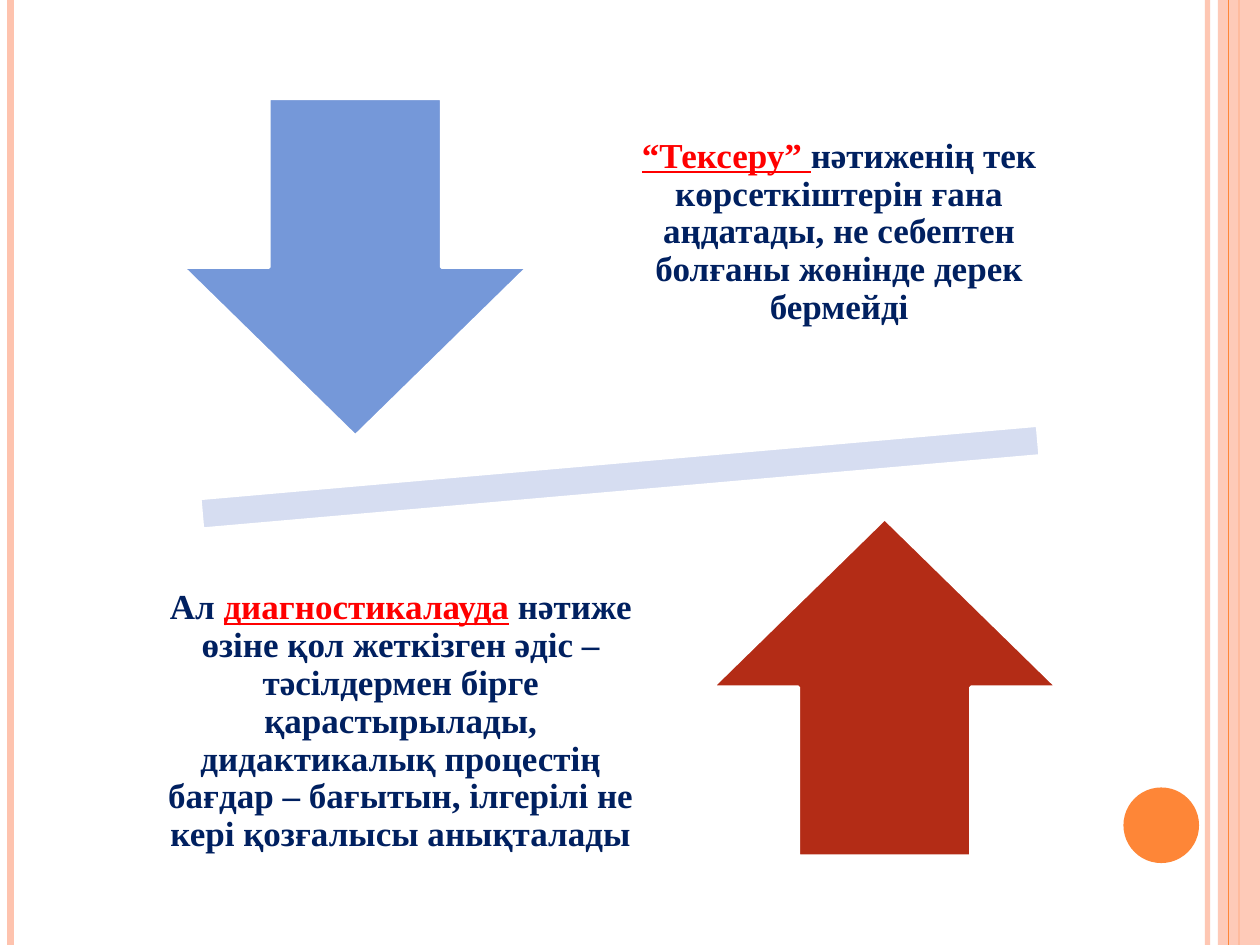
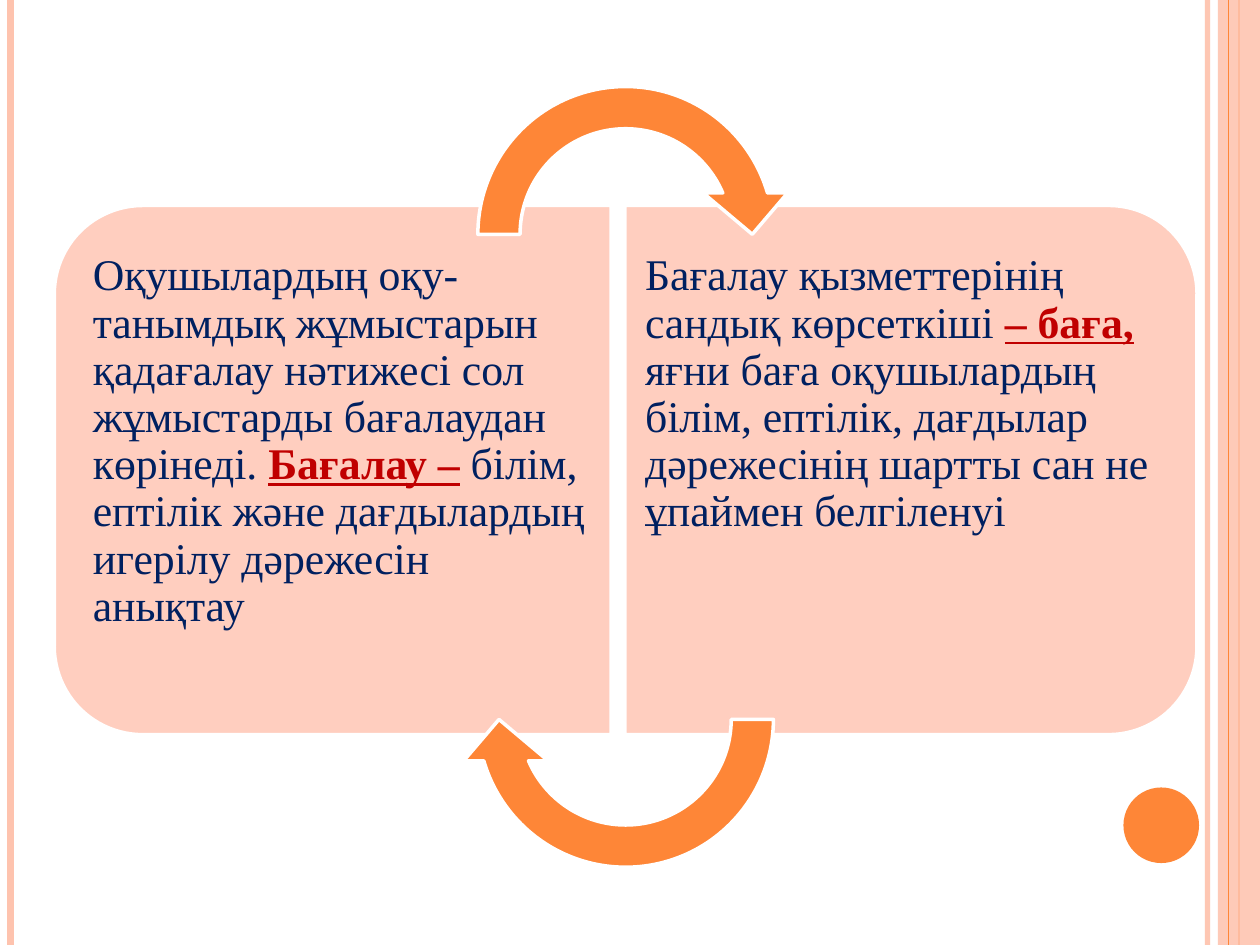
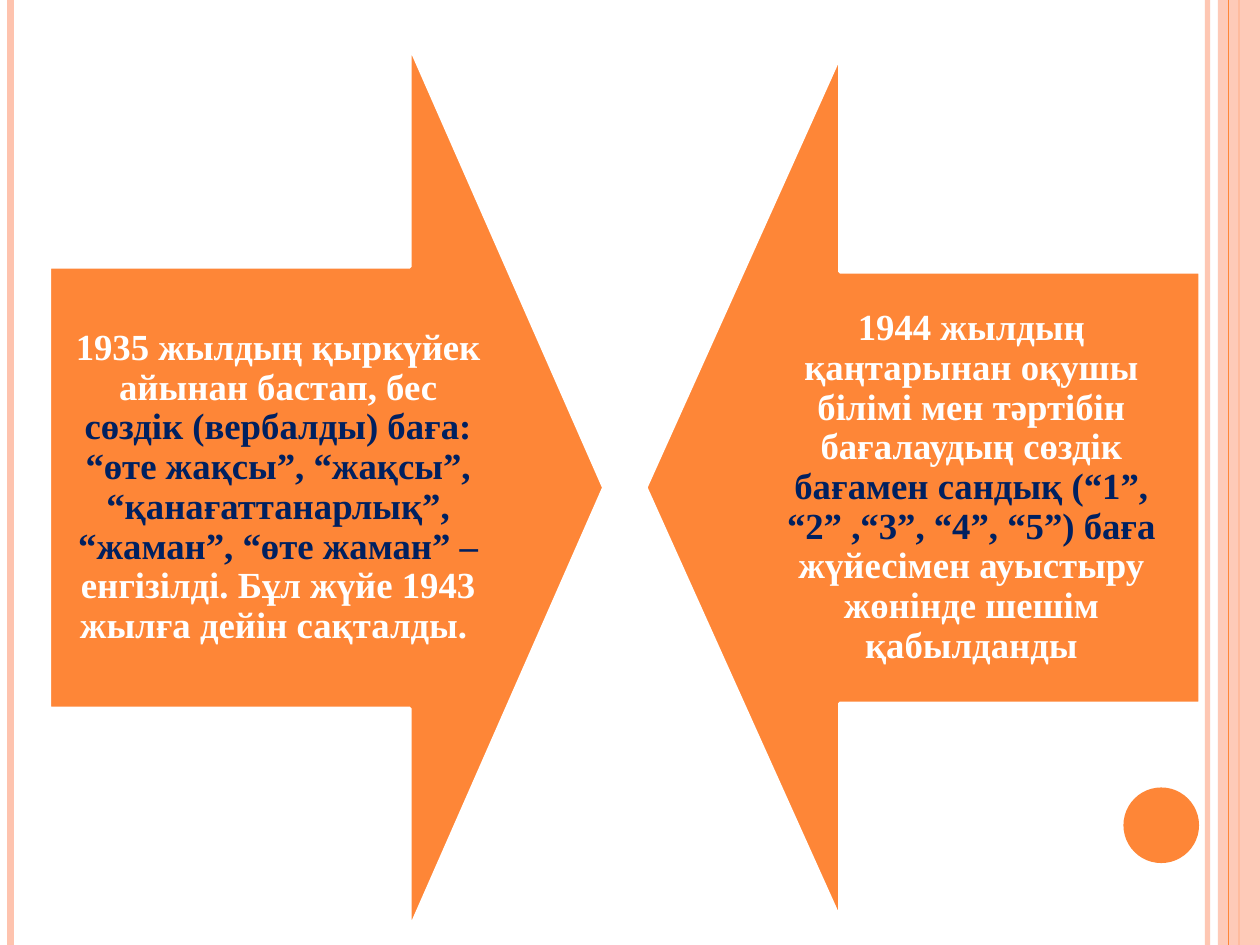
from lxml import etree
from pptx import Presentation
from pptx.dml.color import RGBColor
from pptx.enum import shapes, text
from pptx.oxml.ns import qn
from pptx.util import Pt

W, H = 720, 540
FONT = "Times New Roman"
PEACH, ORANGE, PANEL = "FEC3AE", "FE8637", "FFCEBF"
BLUE, BRICK, BAR = "7598D9", "B32C16", "D6DDF1"
WHITE, NAVY, RED, CRIMSON = "FFFFFF", "002060", "FF0000", "C00000"
SHAPE = shapes.MSO_SHAPE
CENTER = text.PP_ALIGN.CENTER
MIDDLE = text.MSO_ANCHOR.MIDDLE


def rgb(color):
    return RGBColor.from_string(color)


def set_alpha(fill_parent, percent):
    clr = next(fill_parent.iter(qn("a:srgbClr")))
    etree.SubElement(clr, qn("a:alpha")).set("val", str(percent * 1000))


def add_preset(s, kind, box, fill, line=None, rotation=0, adj=()):
    x, y, w, h = box
    if rotation in (90, 270):
        x, y, w, h = x + (w - h) / 2, y + (h - w) / 2, h, w
    sp = s.shapes.add_shape(kind, Pt(x), Pt(y), Pt(w), Pt(h))
    sp.shadow.inherit = False
    sp.rotation = rotation
    sp.fill.solid()
    sp.fill.fore_color.rgb = rgb(fill)
    if line:
        sp.line.color.rgb = rgb(line)
        sp.line.width = Pt(2)
    else:
        sp.line.fill.background()
    for i, value in enumerate(adj):
        sp.adjustments[i] = value
    return sp


def add_stripe(s, x, color, width, alpha=None):
    c = s.shapes.add_connector(shapes.MSO_CONNECTOR.STRAIGHT, Pt(x), 0, Pt(x), Pt(H))
    c.line.color.rgb = rgb(color)
    c.line.width = Pt(width)
    spPr = c._element.spPr
    if alpha:
        set_alpha(spPr, alpha)
    etree.SubElement(spPr, qn("a:effectLst"))


def add_text(s, box, runs, size, insets=(11.5, 11.5, 11.5, 11.5), align=CENTER, anchor=MIDDLE):
    tf = s.shapes.add_textbox(*map(Pt, box)).text_frame
    tf.word_wrap = True
    tf.vertical_anchor = anchor
    tf.margin_left, tf.margin_top, tf.margin_right, tf.margin_bottom = map(Pt, insets)
    p = tf.paragraphs[0]
    p.alignment = align
    p.line_spacing = 0.9
    for words, color, bold, underline in runs:
        r = p.add_run()
        r.text = words
        r.font.name = FONT
        r.font.size = Pt(size)
        r.font.bold = bold
        r.font.underline = underline
        r.font.color.rgb = rgb(color)


def add_frame(s):
    add_stripe(s, 690, PEACH, 3, 93)
    add_stripe(s, 6, PEACH, 4.5)
    add_stripe(s, 708, ORANGE, 1.5)
    band = add_preset(s, SHAPE.RECTANGLE, (696, 0, 24, H), PEACH)
    set_alpha(band._element.spPr, 87)
    add_stripe(s, 702, ORANGE, 0.75)
    add_preset(s, SHAPE.OVAL, (642, 450, 43.2, 43.2), ORANGE)


def add_balance(s, box, upper_runs, lower_runs):
    x, y, w, h = box
    arrow_w, arrow_h, text_h = 197.3, 193, 202.3
    dx, dy = 33.8, 24.5
    bar_w, bar_h = 653.8, 75
    bar = (x + (w - bar_w) / 2, y + (h - bar_h) / 2, bar_w, bar_h)
    add_preset(s, SHAPE.MATH_MINUS, bar, BAR, WHITE, 355)
    add_preset(s, SHAPE.DOWN_ARROW, (x + dx, y + dy, arrow_w, arrow_h), BLUE, WHITE)
    add_text(s, (x + 267.1, y, 283.7, text_h), upper_runs, 20)
    up = (x + w - dx - arrow_w, y + h - dy - arrow_h, arrow_w, arrow_h)
    add_preset(s, SHAPE.UP_ARROW, up, BRICK, WHITE)
    add_text(s, (x, y + h - text_h, 316.8, text_h), lower_runs, 20)


def add_cycle(s, box, left_runs, right_runs):
    x, y, w, h = box
    panel_y, panel_h = y + 80, 302.4
    left_w, right_w = 318.2, 326.9
    pad, ring = 15, 193
    right_x = x + w - right_w
    text_y, text_h = panel_y + pad, panel_h - 2 * pad
    halves = (
        (x, left_w, 270, x + pad, (7.2, 12.2, 11.5, 12.2), left_runs),
        (right_x, right_w, 90, right_x, (11.5, 12.2, 7.2, 12.2), right_runs),
    )
    for panel_x, panel_w, rotation, text_x, insets, runs in halves:
        add_preset(s, SHAPE.ROUND_2_SAME_RECTANGLE, (panel_x, panel_y, panel_w, panel_h),
                   PANEL, WHITE, rotation, (0.167, 0))
        add_text(s, (text_x, text_y, panel_w - pad, text_h), runs, 25, insets,
                 text.PP_ALIGN.LEFT, text.MSO_ANCHOR.TOP)
    for ring_y, rotation in ((y, 0), (y + h - ring, 180)):
        add_preset(s, SHAPE.CIRCULAR_ARROW, (x + (w - ring) / 2, ring_y, ring, ring),
                   ORANGE, WHITE, rotation, (0.125, 11.423, 204.577, 108, 0.125))


def add_big_arrow(s, box, rotation, runs):
    x, y, w, h = box
    text_w = 261.4
    text_x = x if rotation == 270 else x + w - text_w
    add_preset(s, SHAPE.DOWN_ARROW, box, ORANGE, WHITE, rotation, (0.5, 0.35))
    add_text(s, (text_x, y + h / 4, text_w, h / 2), runs, 21)


def main():
    prs = Presentation()
    prs.slide_width, prs.slide_height = Pt(W), Pt(H)
    checking, grading, history = (prs.slides.add_slide(prs.slide_layouts[6]) for _ in range(3))
    for s in (checking, grading, history):
        add_frame(s)

    add_balance(
        checking, (70.6, 31.7, 567.4, 482),
        [("“Тексеру” ", RED, True, True),
         ("нəтиженің тек көрсеткіштерін ғана аңдатады, не себептен болғаны жөнінде "
          "дерек бермейді", NAVY, True, False)],
        [("Ал ", NAVY, True, False),
         ("диагностикалауда", RED, True, True),
         (" нəтиже өзіне қол жеткізген əдіс – тəсілдермен бірге қарастырылады, "
          "дидактикалық процестің бағдар – бағытын, ілгерілі не кері қозғалысы "
          "анықталады", NAVY, True, False)])

    add_cycle(
        grading, (31, 37.4, 653, 470.2),
        [("Оқушылардың оқу-танымдық жұмыстарын қадағалау нəтижесі сол жұмыстарды "
          "бағалаудан көрінеді. ", NAVY, False, False),
         ("Бағалау –", CRIMSON, True, True),
         (" білім, ептілік жəне дағдылардың игерілу дəрежесін анықтау", NAVY, False, False)],
        [("Бағалау қызметтерінің сандық көрсеткіші ", NAVY, False, False),
         ("– баға, ", CRIMSON, True, True),
         ("яғни баға оқушылардың білім, ептілік, дағдылар дəрежесінің шартты сан не "
          "ұпаймен белгіленуі", NAVY, False, False)])

    add_big_arrow(
        history, (28.3, 26.3, 316.8, 504.7), 270,
        [("1935 жылдың қыркүйек айынан бастап, бес ", WHITE, True, False),
         ("сөздік (вербалды) баға: “өте жақсы”, “жақсы”, “қанағаттанарлық”, “жаман”, "
          "“өте жаман” – ", NAVY, True, False),
         ("енгізілді. Бұл жүйе 1943 жылға дейін сақталды. ", WHITE, True, False)])
    add_big_arrow(
        history, (369, 32, 316.8, 493.2), 90,
        [("1944 жылдың қаңтарынан оқушы білімі мен тəртібін бағалаудың сөздік ",
          WHITE, True, False),
         ("бағамен сандық (“1”, “2” ,“3”, “4”, “5”) баға ", NAVY, True, False),
         ("жүйесімен ауыстыру жөнінде шешім қабылданды", WHITE, True, False)])

    prs.save("out.pptx")


if __name__ == "__main__":
    main()
